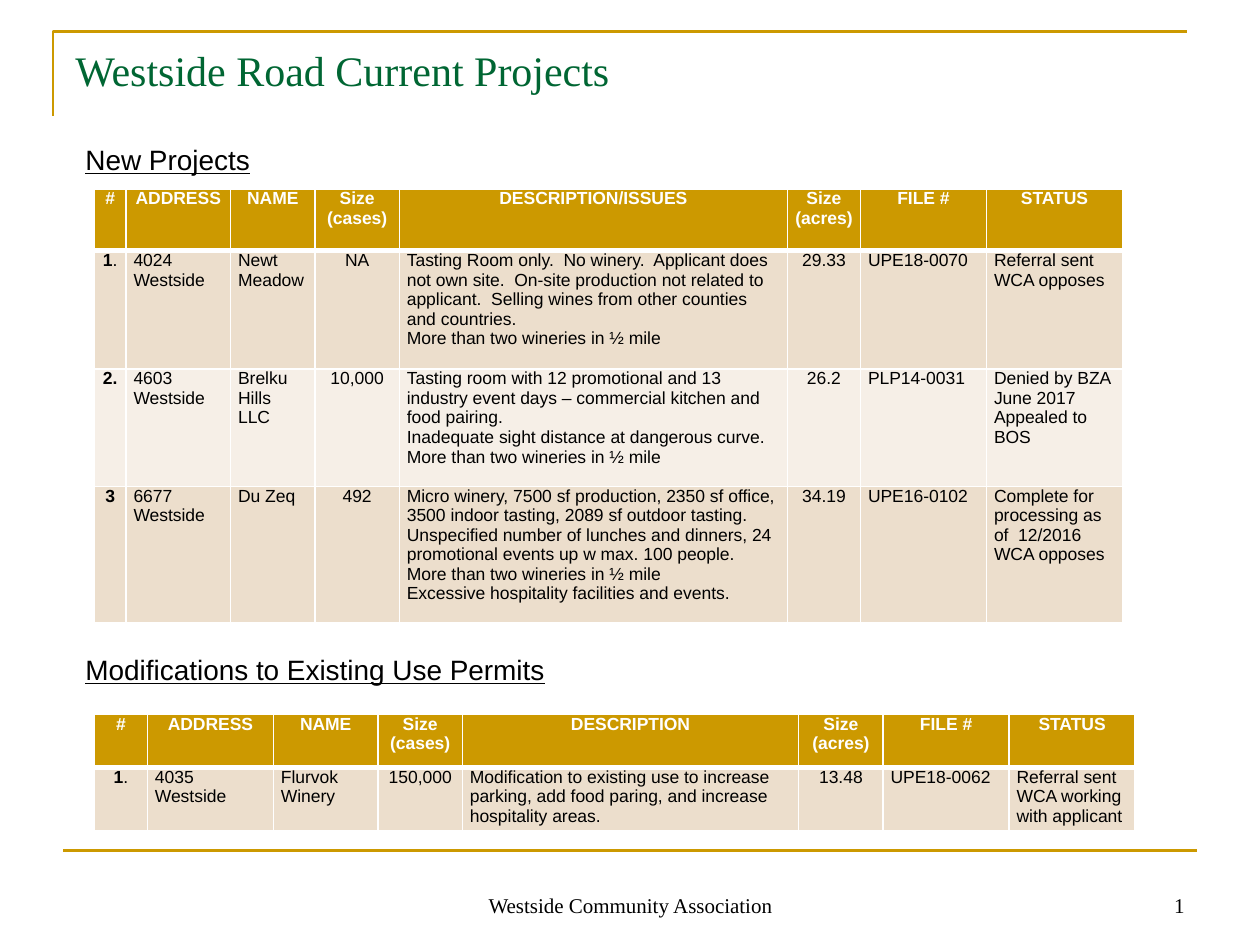
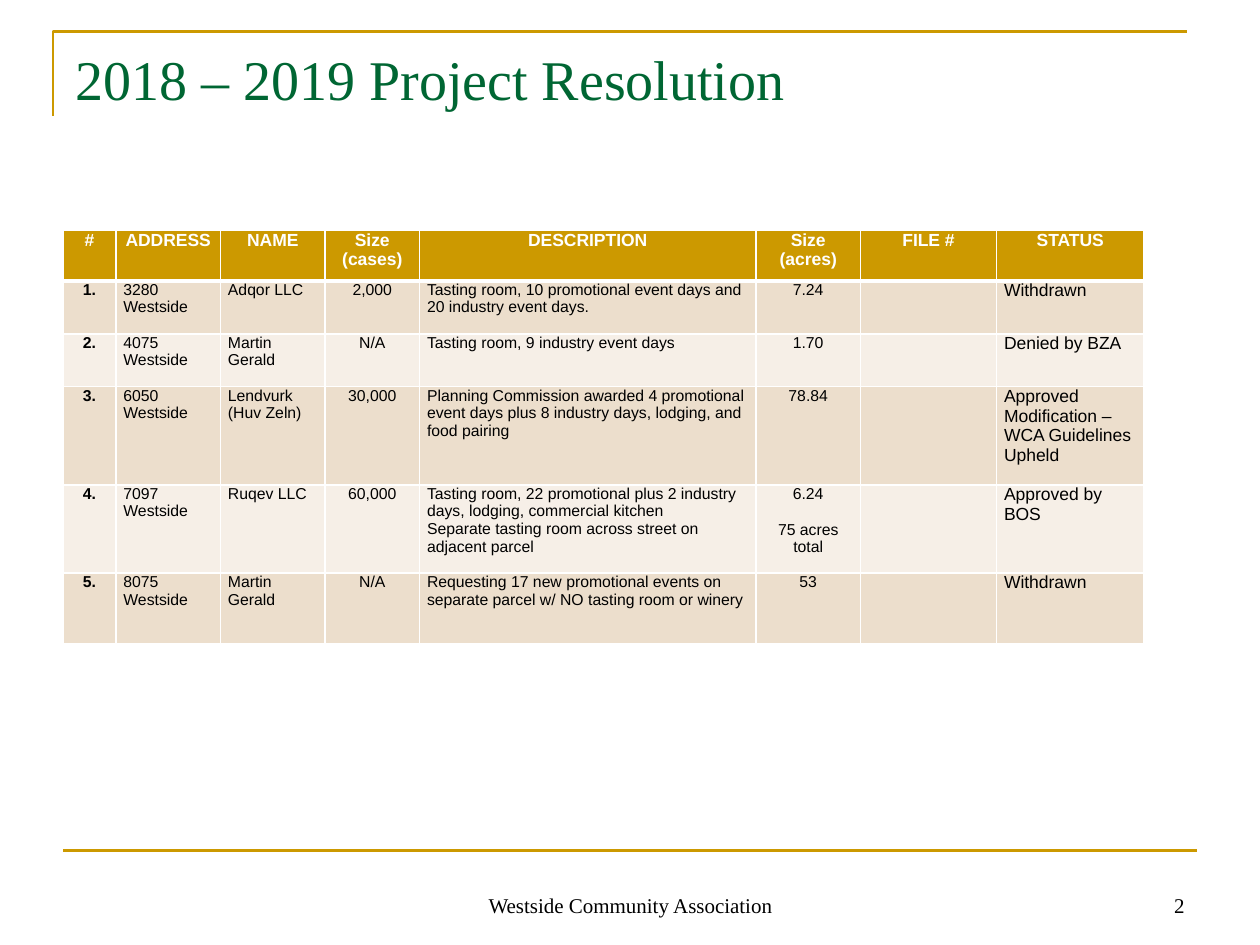
from dataclasses import dataclass

from lxml.etree import SubElement
from pptx import Presentation
from pptx.dml.color import RGBColor
from pptx.enum.shapes import MSO_CONNECTOR as Connector
from pptx.enum.text import MSO_ANCHOR as Anchor, PP_ALIGN as Align
from pptx.oxml import parse_xml
from pptx.oxml.ns import nsdecls, qn
from pptx.slide import Slide
from pptx.util import Inches, Length, Pt


@dataclass(frozen=True)
class Theme:
    gold: str = "CC9900"
    green: str = "006633"
    black: str = "000000"
    white: str = "FFFFFF"
    odd_row: str = "ECDECC"
    even_row: str = "F6EFE7"
    serif: str = "Times New Roman"
    sans: str = "Arial"
    title: Length = Pt(24)
    large_title: Length = Pt(32)
    heading: Length = Pt(16)
    footer: Length = Pt(12)
    cell: Length = Pt(10)
    small_cell: Length = Pt(9)
    rule: Length = Pt(1.5)
    border: Length = Pt(1)
    header_border: Length = Pt(3)


THEME = Theme()
NUMBER, ACRES, STATUS = 0, 5, 7
CENTERED = {NUMBER, 3, ACRES}


@dataclass(frozen=True)
class Caption:
    text: str
    left: float
    top: float
    width: float
    height: float
    size: Length
    font: str = THEME.serif
    color: str = THEME.black
    align: Align = Align.LEFT
    anchor: Anchor = Anchor.TOP
    underline: bool = False


@dataclass(frozen=True)
class Register:
    left: float
    top: float
    widths: tuple[float, ...]
    heights: tuple[float, ...]
    projects: tuple[tuple[str, ...], ...]
    description: str = "DESCRIPTION"
    size: Length = THEME.cell
    acres_gap: Length = Pt(0)


@dataclass(frozen=True)
class Page:
    title: str
    title_size: Length
    registers: tuple[Register, ...]
    headings: tuple[tuple[str, float], ...] = ()


NEW_PROJECTS = Register(
    0.75, 1.5,
    (0.25, 0.83, 0.67, 0.67, 3.08, 0.58, 1, 1.08),
    (0.49, 0.94, 0.93, 1.08),
    (
        ("1.", "4024\nWestside", "Newt Meadow", "NA",
         "Tasting Room only.  No winery.  Applicant does not own site.  "
         "On-site production not related to applicant.  Selling wines from "
         "other counties and countries.\nMore than two wineries in ½ mile",
         "29.33", "UPE18-0070", "Referral sent\nWCA opposes"),
        ("2.", "4603 Westside", "Brelku Hills LLC", "10,000",
         "Tasting room with 12 promotional and 13 industry event days – "
         "commercial kitchen and food pairing.\nInadequate sight distance at "
         "dangerous curve.  More than two wineries in ½ mile",
         "26.2", "PLP14-0031", "Denied by BZA June 2017\nAppealed to BOS"),
        ("3", "6677 Westside", "Du Zeq", "492",
         "Micro winery, 7500 sf production, 2350 sf office, 3500 indoor "
         "tasting, 2089 sf outdoor tasting. Unspecified number of lunches and "
         "dinners, 24 promotional events up w max. 100 people.\n"
         "More than two wineries in ½ mile\n"
         "Excessive hospitality facilities and events.",
         "34.19", "UPE16-0102",
         "Complete for processing as of  12/2016\nWCA opposes"),
    ),
    description="DESCRIPTION/ISSUES",
)

MODIFICATIONS = Register(
    0.75, 5.67,
    (0.42, 1, 0.83, 0.67, 2.67, 0.67, 1, 1),
    (0.42, 0.46),
    (
        ("1.", "4035\nWestside", "Flurvok Winery", "150,000",
         "Modification to existing use to increase parking, add food paring, "
         "and increase hospitality areas.",
         "13.48", "UPE18-0062", "Referral sent\nWCA working with applicant"),
    ),
)

RESOLUTIONS = Register(
    0.5, 1.83,
    (0.42, 0.83, 0.83, 0.75, 2.67, 0.83, 1.08, 1.17),
    (0.4, 0.42, 0.42, 0.78, 0.7, 0.56),
    (
        ("1.", "3280 Westside", "Adqor LLC", "2,000",
         "Tasting room, 10 promotional event days and 20 industry event days.",
         "7.24", "", "Withdrawn"),
        ("2.", "4075 Westside", "Martin Gerald", "N/A",
         "Tasting room, 9 industry event days", "1.70", "", "Denied by BZA"),
        ("3.", "6050 Westside", "Lendvurk\n(Huv Zeln)", "30,000",
         "Planning Commission awarded 4 promotional event days plus 8 "
         "industry days, lodging, and food pairing",
         "78.84", "", "Approved Modification – WCA Guidelines Upheld"),
        ("4.", "7097 Westside", "Ruqev LLC", "60,000",
         "Tasting room, 22 promotional plus 2 industry days, lodging, "
         "commercial kitchen\n"
         "Separate tasting room across street on adjacent parcel",
         "6.24\n75 acres total", "", "Approved by BOS"),
        ("5.", "8075 Westside", "Martin Gerald", "N/A",
         "Requesting 17 new promotional events on separate parcel w/ NO "
         "tasting room or winery",
         "53", "", "Withdrawn"),
    ),
    size=THEME.small_cell,
    acres_gap=Pt(10.5),
)

PAGES = (
    Page("Westside Road Current Projects", THEME.title,
         (NEW_PROJECTS, MODIFICATIONS),
         (("New Projects", 1.08),
          ("Modifications to Existing Use Permits", 5.13))),
    Page("2018 – 2019 Project Resolution", THEME.large_title, (RESOLUTIONS,)),
)


def apply_format(target, values: dict) -> None:
    for attribute, value in values.items():
        setattr(target, attribute, value)


def style_font(font, color: str, **values) -> None:
    apply_format(font, values)
    font.color.rgb = RGBColor.from_string(color)


def style_rule(shape) -> None:
    shape.line.color.rgb = RGBColor.from_string(THEME.gold)
    shape.line.width = THEME.rule


def draw_caption(slide: Slide, caption: Caption) -> None:
    box = slide.shapes.add_textbox(*map(Inches, (
        caption.left, caption.top, caption.width, caption.height)))
    apply_format(box.text_frame, {
        "word_wrap": True, "vertical_anchor": caption.anchor})
    paragraph = box.text_frame.paragraphs[0]
    paragraph.alignment = caption.align
    run = paragraph.add_run()
    run.text = caption.text
    style_font(run.font, caption.color, name=caption.font, size=caption.size,
               underline=caption.underline)


def draw_frame(slide: Slide, page_number: int) -> None:
    outline = slide.shapes.build_freeform(Inches(0.42), Inches(0.92))
    outline.add_line_segments(
        [(Inches(0.42), Inches(0.25)), (Inches(9.42), Inches(0.25))],
        close=False)
    corner = outline.convert_to_shape()
    corner.fill.background()
    corner.shadow.inherit = False
    style_rule(corner)
    footer_rule = slide.shapes.add_connector(
        Connector.STRAIGHT, *map(Inches, (0.5, 6.75, 9.5, 6.75)))
    style_rule(footer_rule)
    SubElement(footer_rule._element.spPr, qn("a:effectLst"))
    for text, left, width, align in (
        ("Westside Community Association", 3.42, 3.17, Align.CENTER),
        (str(page_number), 7.17, 2.33, Align.RIGHT),
    ):
        draw_caption(slide, Caption(text, left, 6.83, width, 0.5, THEME.footer,
                                    align=align, anchor=Anchor.BOTTOM))


def draw_borders(cell, row: int) -> None:
    properties = cell._tc.get_or_add_tcPr()
    thick_side = {0: "B", 1: "T"}.get(row)
    for position, side in enumerate("LRTB"):
        width = THEME.header_border if side == thick_side else THEME.border
        properties.insert(position, parse_xml(
            f'<a:ln{side} {nsdecls("a")} w="{int(width)}"><a:solidFill>'
            f'<a:srgbClr val="{THEME.white}"/></a:solidFill></a:ln{side}>'))


def fill_cell(cell, text: str, row: int, column: int,
              register: Register) -> None:
    header = row == 0
    size = THEME.cell if header or column == STATUS else register.size
    centered = header or column in CENTERED
    fill = THEME.gold if header else (
        THEME.odd_row if row % 2 else THEME.even_row)
    apply_format(cell, {
        "margin_left": Inches(0.06), "margin_right": Inches(0.06),
        "margin_top": 0, "margin_bottom": 0})
    cell.fill.solid()
    cell.fill.fore_color.rgb = RGBColor.from_string(fill)
    draw_borders(cell, row)
    for index, line in enumerate(text.split("\n")):
        frame = cell.text_frame
        paragraph = frame.add_paragraph() if index else frame.paragraphs[0]
        paragraph.alignment = Align.CENTER if centered else Align.LEFT
        if index and column == ACRES and not header:
            paragraph.space_before = register.acres_gap
        light_dot = line == "1." and register.size == THEME.cell
        for piece in (line[:1], line[1:]) if light_dot else (line,):
            run = paragraph.add_run()
            run.text = piece
            style_font(run.font, THEME.white if header else THEME.black,
                       name=THEME.sans, size=size,
                       bold=header or (column == NUMBER and piece != "."))


def draw_register(slide: Slide, register: Register) -> None:
    header = ("#", "ADDRESS", "NAME", "Size\n(cases)", register.description,
              "Size\n(acres)", "FILE #", "STATUS")
    rows = (header, *register.projects)
    table = slide.shapes.add_table(len(rows), len(header), *map(Inches, (
        register.left, register.top,
        sum(register.widths), sum(register.heights)))).table
    table.horz_banding = False
    for column, width in zip(table.columns, register.widths):
        column.width = Inches(width)
    for row, height in zip(table.rows, register.heights):
        row.height = Inches(height)
    for row, texts in enumerate(rows):
        for column, text in enumerate(texts):
            fill_cell(table.cell(row, column), text, row, column, register)


def main() -> None:
    deck = Presentation()
    apply_format(deck, {
        "slide_width": Inches(10), "slide_height": Inches(7.5)})
    for page_number, page in enumerate(PAGES, 1):
        slide = deck.slides.add_slide(deck.slide_layouts[6])
        draw_frame(slide, page_number)
        draw_caption(slide, Caption(page.title, 0.5, 0.3, 9, 0.75,
                                    page.title_size, color=THEME.green))
        for heading, top in page.headings:
            draw_caption(slide, Caption(heading, 0.58, top, 9, 0.4,
                                        THEME.heading, THEME.sans,
                                        underline=True))
        for register in page.registers:
            draw_register(slide, register)
    deck.save("out.pptx")


if __name__ == "__main__":
    main()
